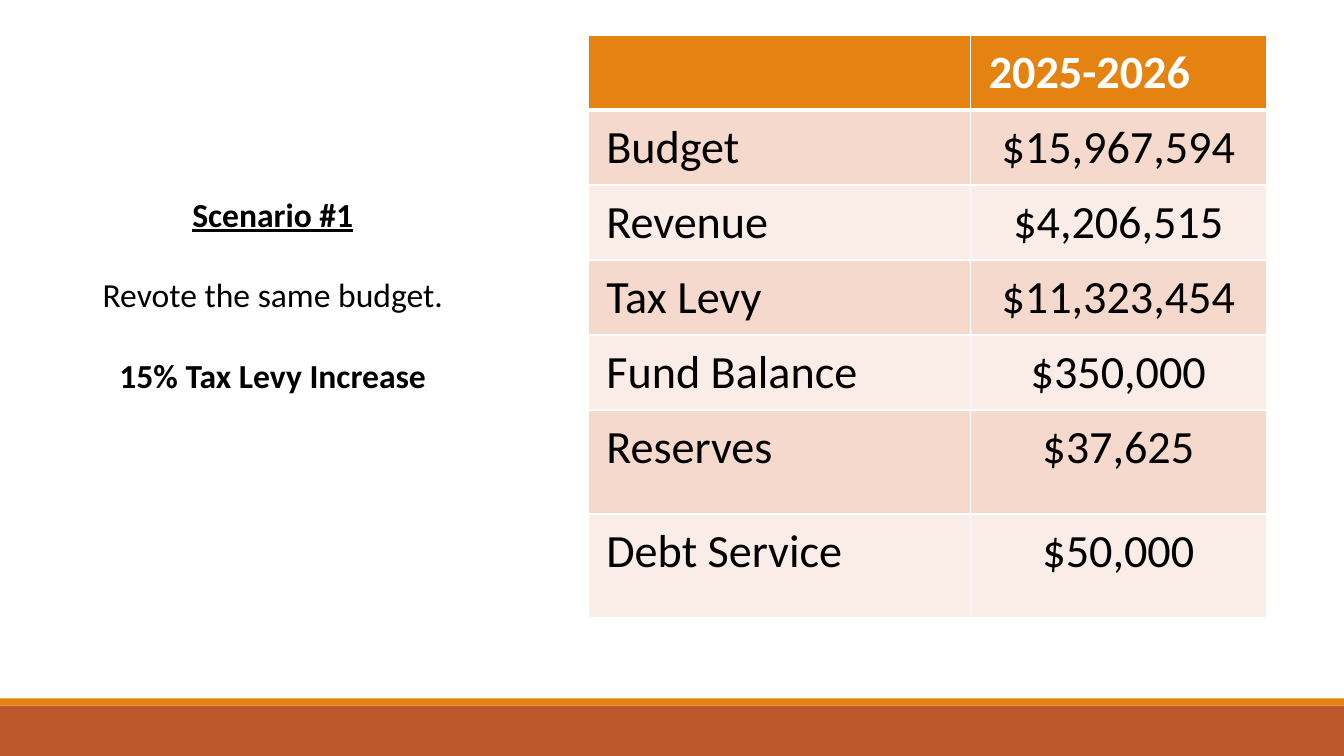
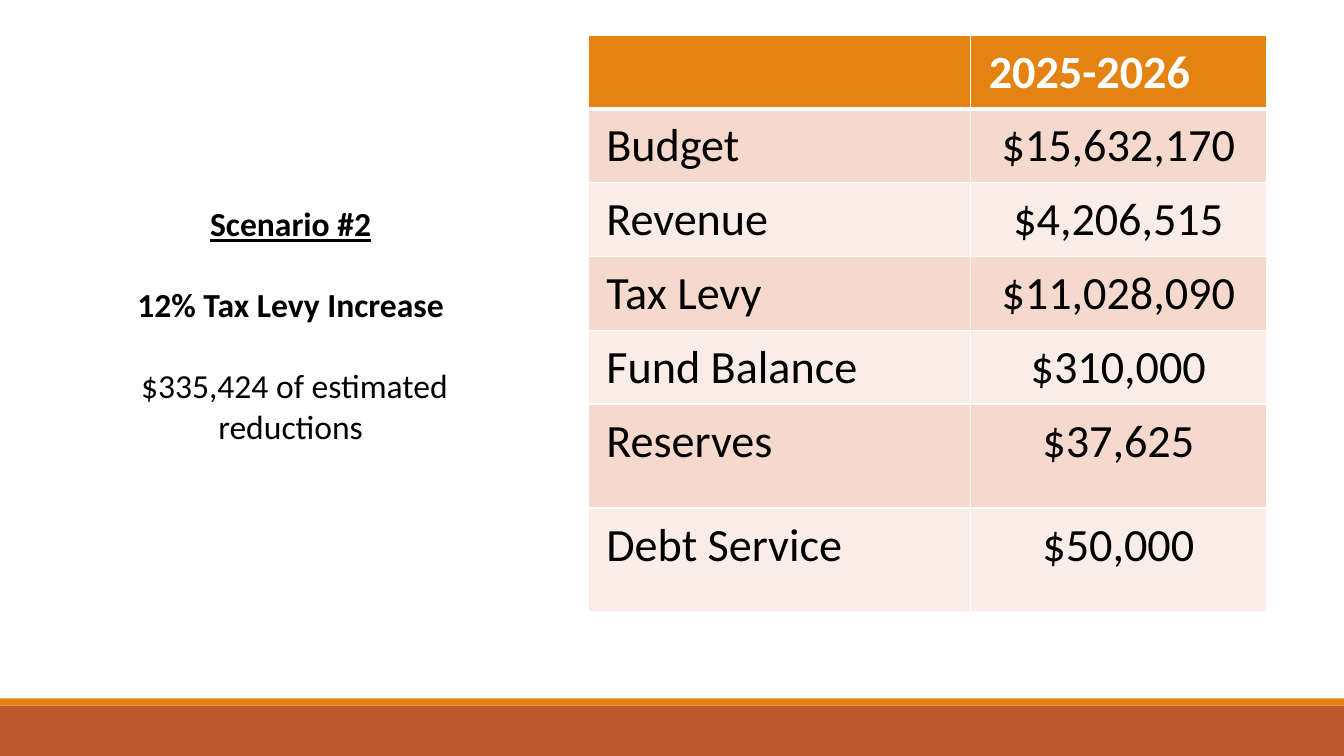
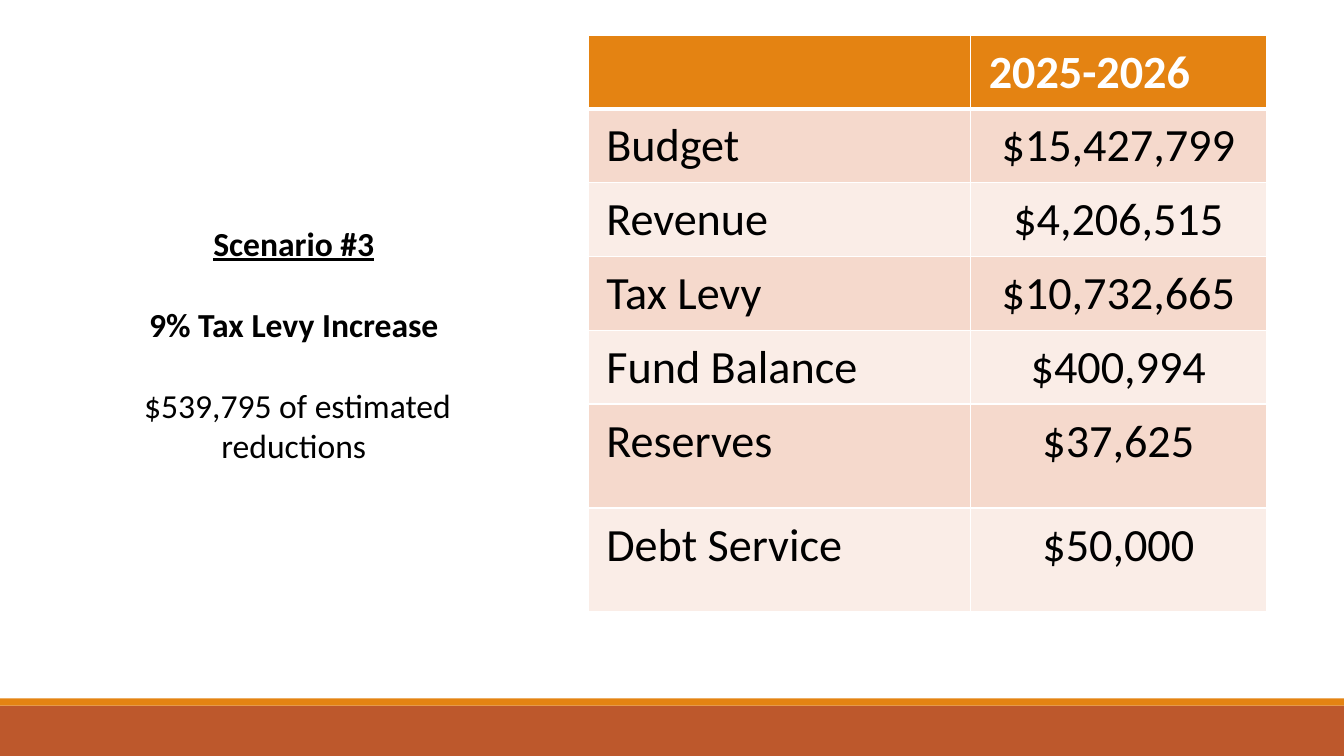
"""Build three budget scenario slides, each with a summary and a table of figures."""
from lxml.etree import SubElement
from pptx import Presentation
from pptx.dml.color import RGBColor
from pptx.enum.shapes import MSO_SHAPE
from pptx.enum.text import MSO_AUTO_SIZE, PP_ALIGN
from pptx.oxml.ns import qn
from pptx.util import Cm, Pt

COLORS = {
    "footer": "BD582C",
    "accent": "E48312",
    "odd_row": "F5D9CC",
    "even_row": "FAEDE7",
    "text": "000000",
    "white": "FFFFFF",
}
FONT = "Calibri"
LABELS = ["Budget", "Revenue", "Tax Levy", "Fund Balance", "Reserves", "Debt Service"]
SCENARIOS = [
    {
        "heading": "Scenario #1",
        "details": [("Revote the same budget.", False), ("15% Tax Levy Increase", True)],
        "amounts": ["$15,967,594", "$4,206,515", "$11,323,454", "$350,000", "$37,625", "$50,000"],
        "summary_box": (1.96, 4.75, 9.83, 6.4),
        "row_height": 1.89,
    },
    {
        "heading": "Scenario #2",
        "details": [("12% Tax Levy Increase", True), (" $335,424 of estimated reductions", False)],
        "amounts": ["$15,632,170", "$4,206,515", "$11,028,090", "$310,000", "$37,625", "$50,000"],
        "summary_box": (2.41, 5, 9.83, 6.4),
        "row_height": 1.86,
    },
    {
        "heading": "Scenario #3",
        "details": [("9% Tax Levy Increase", True), (" $539,795 of estimated reductions", False)],
        "amounts": ["$15,427,799", "$4,206,515", "$10,732,665", "$400,994", "$37,625", "$50,000"],
        "summary_box": (2.49, 5.49, 9.83, 7.44),
        "row_height": 1.86,
    },
]


def style_text(paragraph, size, color, bold):
    """Format every run of a paragraph."""
    for run in paragraph.runs:
        run.font.name = FONT
        run.font.size = Pt(size)
        run.font.bold = bold
        run.font.color.rgb = RGBColor.from_string(COLORS[color])


def add_border(cell, side, width):
    """Draw one white side of a table cell."""
    line = SubElement(cell._tc.get_or_add_tcPr(), qn(f"a:ln{side}"), w=str(Pt(width)))
    SubElement(SubElement(line, qn("a:solidFill")), qn("a:srgbClr"), val=COLORS["white"])


prs = Presentation()
prs.slide_width = Cm(33.87)
prs.slide_height = Cm(19.05)
layout = prs.slide_layouts[6]
for placeholder in list(layout.placeholders):
    layout.shapes.element.remove(placeholder.element)
slides = [prs.slides.add_slide(layout) for _ in SCENARIOS]

for color, top, height in [("footer", 17.78, 1.27), ("accent", 17.6, 0.18)]:
    band = slides[0].shapes.add_shape(
        MSO_SHAPE.RECTANGLE, 0, Cm(top), prs.slide_width, Cm(height)
    )
    band.shadow.inherit = False
    band.fill.solid()
    band.fill.fore_color.rgb = RGBColor.from_string(COLORS[color])
    band.line.fill.background()
    layout.shapes.element.append(band.element)

for slide, scenario in zip(slides, SCENARIOS):
    rows = [("", "2025-2026"), *zip(LABELS, scenario["amounts"])]
    heights = [scenario["row_height"]] * 5 + [2.62] * 2
    budget = slide.shapes.add_table(
        len(rows), 2, Cm(14.82), Cm(0.88), Cm(17.09), Cm(sum(heights))
    ).table
    budget.columns[0].width = Cm(9.64)
    budget.columns[1].width = Cm(7.45)

    for row_index, texts in enumerate(rows):
        budget.rows[row_index].height = Cm(heights[row_index])
        is_header = row_index == 0
        fill = "accent" if is_header else ("odd_row" if row_index % 2 else "even_row")
        for column_index, text in enumerate(texts):
            cell = budget.cell(row_index, column_index)
            cell.margin_left = cell.margin_right = Cm(0.46)
            cell.margin_top = cell.margin_bottom = Cm(0.23)
            add_border(cell, "L", 1)
            add_border(cell, "R", 1)
            add_border(cell, "T", 3 if row_index == 1 else 1)
            add_border(cell, "B", 3 if is_header else 1)
            cell.fill.solid()
            cell.fill.fore_color.rgb = RGBColor.from_string(COLORS[fill])
            entry = cell.text_frame.paragraphs[0]
            entry.text = text
            if column_index == 1 and not is_header:
                entry.alignment = PP_ALIGN.CENTER
            style_text(entry, 33, "white" if is_header else "text", is_header)

    summary = slide.shapes.add_textbox(*map(Cm, scenario["summary_box"])).text_frame
    summary.word_wrap = True
    summary.auto_size = MSO_AUTO_SIZE.SHAPE_TO_FIT_TEXT
    heading = summary.paragraphs[0]
    heading.text = scenario["heading"]
    heading.alignment = PP_ALIGN.CENTER
    style_text(heading, 24, "text", True)
    heading.runs[0].font.underline = True
    for text, bold in scenario["details"]:
        detail = summary.add_paragraph()
        detail.text = text
        detail.alignment = PP_ALIGN.CENTER
        detail.space_before = Pt(29)
        style_text(detail, 24, "text", bold)

prs.save("out.pptx")
